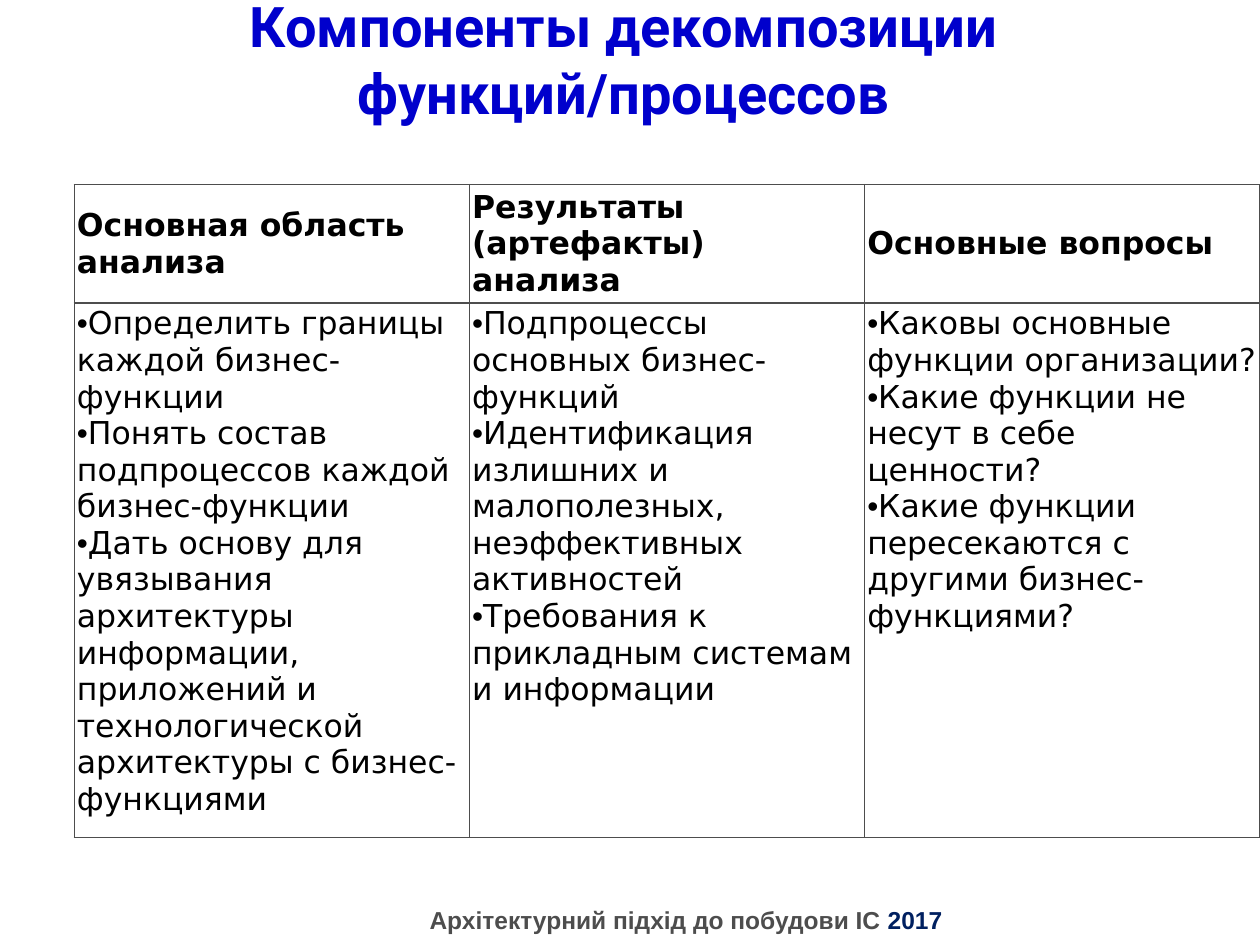
from pptx import Presentation
from pptx.dml.color import RGBColor
from pptx.enum.text import MSO_ANCHOR, MSO_AUTO_SIZE, PP_ALIGN
from pptx.oxml.ns import qn
from pptx.util import Pt
from lxml.etree import SubElement

COLUMNS = [
    ("Основная область анализа", [
        "Определить границы каждой бизнес-функции",
        "Понять состав подпроцессов каждой бизнес-функции",
        "Дать основу для увязывания архитектуры информации, приложений "
        "и технологической архитектуры с бизнес-функциями",
    ]),
    ("Результаты (артефакты) анализа", [
        "Подпроцессы основных бизнес-функций",
        "Идентификация излишних и малополезных, неэффективных активностей",
        "Требования к прикладным системам и информации",
    ]),
    ("Основные вопросы", [
        "Каковы основные функции организации?",
        "Какие функции не несут в себе ценности?",
        "Какие функции пересекаются с другими бизнес-функциями?",
    ]),
]


def color(value):
    return RGBColor.from_string(value)


def style_font(font, name, size, value, bold):
    font.name, font.size, font.bold = name, Pt(size), bold
    font.color.rgb = color(value)


def add_bullet(paragraph):
    props = paragraph._p.get_or_add_pPr()
    props.set("marL", "0")
    props.set("indent", "0")
    SubElement(props, qn("a:buFont"), typeface="Arial")
    SubElement(props, qn("a:buChar"), char="•")


def add_borders(cell, value, width):
    props = cell._tc.get_or_add_tcPr()
    for side in ("a:lnL", "a:lnR", "a:lnT", "a:lnB"):
        line = SubElement(props, qn(side), w=str(Pt(width)))
        fill = SubElement(line, qn("a:solidFill"))
        SubElement(fill, qn("a:srgbClr"), val=value)


def fill_cell(cell, lines, anchor, bold, bulleted):
    add_borders(cell, "4D4D4D", 1)
    cell.fill.solid()
    cell.fill.fore_color.rgb = color("FFFFFF")
    cell.margin_left = cell.margin_right = Pt(1.5)
    cell.margin_top = cell.margin_bottom = Pt(1.5)
    cell.vertical_anchor = anchor
    frame = cell.text_frame
    frame.text = "\n".join(lines)
    for paragraph in frame.paragraphs:
        if bulleted:
            add_bullet(paragraph)
        style_font(paragraph.font, "DejaVu Sans", 18, "000000", bold)


def place_title(slide, left, top, width, height):
    title = slide.shapes.title
    title.left, title.top = Pt(left), Pt(top)
    title.width, title.height = Pt(width), Pt(height)
    frame = title.text_frame
    frame.text = "Компоненты декомпозиции функций/процессов"
    frame.auto_size = MSO_AUTO_SIZE.NONE
    frame.vertical_anchor = MSO_ANCHOR.MIDDLE
    heading = frame.paragraphs[0]
    heading.alignment = PP_ALIGN.CENTER
    style_font(heading.font, "Roboto", 32, "0000CC", True)


def place_components(slide, left, top, width, header_height, body_height):
    # Row heights are minimums: the rows grow to hold their text
    table = slide.shapes.add_table(
        2, len(COLUMNS), Pt(left), Pt(top), Pt(width),
        Pt(header_height + body_height)).table
    table.rows[0].height = Pt(header_height)
    table.rows[1].height = Pt(body_height)
    for index, (header, points) in enumerate(COLUMNS):
        table.columns[index].width = Pt(width / len(COLUMNS))
        fill_cell(table.cell(0, index), [header], MSO_ANCHOR.MIDDLE, True, False)
        fill_cell(table.cell(1, index), points, MSO_ANCHOR.TOP, False, True)


def place_footer(slide, left, top, width, height):
    footer = slide.shapes.add_textbox(Pt(left), Pt(top), Pt(width), Pt(height))
    frame = footer.text_frame
    frame.word_wrap = True
    line = frame.paragraphs[0]
    line.alignment = PP_ALIGN.CENTER
    for text, value in (("Архітектурний підхід до побудови ІС", "4D4D4D"),
                        (" 2017", "002060")):
        run = line.add_run()
        run.text = text
        style_font(run.font, "Arial", 14, value, True)


def main():
    deck = Presentation()
    deck.slide_width, deck.slide_height = Pt(720), Pt(540)
    slide = deck.slides.add_slide(deck.slide_layouts[5])  # Title Only
    place_footer(slide, 65, 513.5, 654, 24.5)
    place_title(slide, 31.5, 1, 650, 65)
    place_components(slide, 42.5, 105.5, 677.5, 42.5, 281)
    deck.save("out.pptx")


if __name__ == "__main__":
    main()
